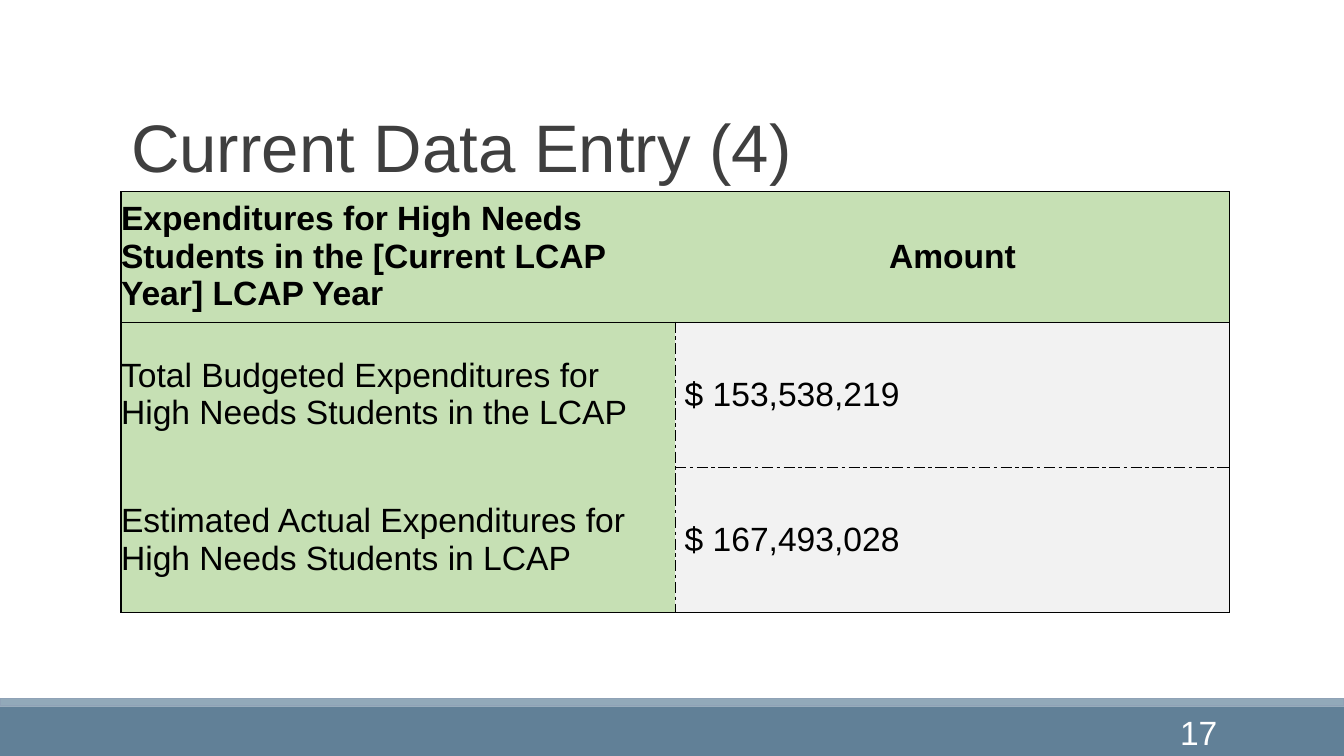
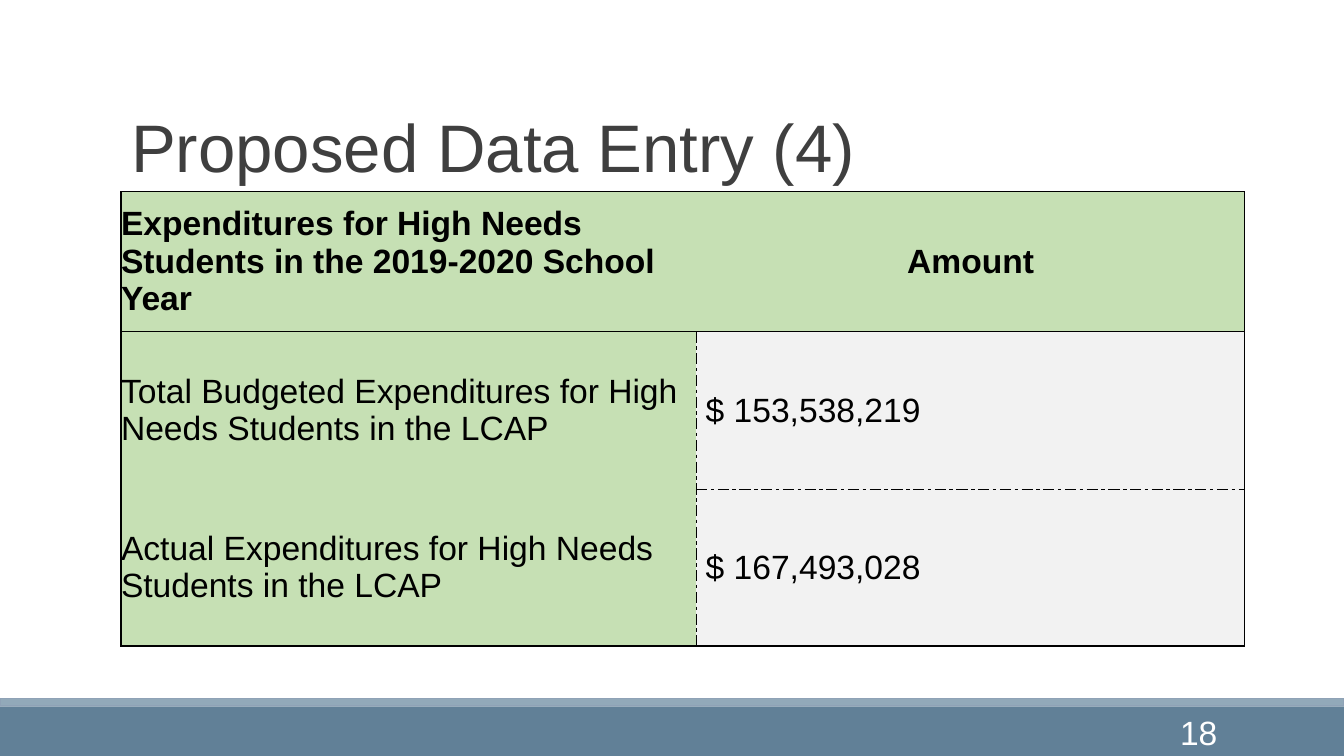
from lxml.etree import SubElement
from pptx import Presentation
from pptx.dml.color import RGBColor
from pptx.enum.shapes import MSO_SHAPE
from pptx.enum.text import MSO_ANCHOR, MSO_AUTO_SIZE, PP_ALIGN
from pptx.oxml.ns import qn
from pptx.util import Cm, Pt

FONT = "Arial"
BLACK, WHITE, TITLE_GREY = "000000", "FFFFFF", "3F3F3F"
GREEN, PALE_GREY = "C6E0B4", "F2F2F2"
BANDS = [
    (17.8, 1.25, "618097", None),
    (17.6, 0.18, "92A9B9", "8FA2B6"),
]
LEFT, TABLE_TOP = 3.05, 4.83
FIRST_NUMBER = 17

PAGES = [
    {
        "title": "Current Data Entry (4)",
        "columns": [13.97, 13.97],
        "heights": [3.28, 3.66, 3.66],
        "rows": [
            ("Expenditures for High Needs Students in the [Current LCAP Year] LCAP Year", "Amount"),
            ("Total Budgeted Expenditures for High Needs Students in the LCAP", " $ 153,538,219"),
            ("Estimated Actual Expenditures for High Needs Students in LCAP", " $ 167,493,028"),
        ],
    },
    {
        "title": "Proposed Data Entry (4)",
        "columns": [14.5, 13.82],
        "heights": [3.53, 3.96, 3.96],
        "rows": [
            ("Expenditures for High Needs Students in the 2019-2020 School Year", "Amount"),
            ("Total Budgeted Expenditures for High Needs Students in the LCAP", " $ 153,538,219"),
            ("Actual Expenditures for High Needs Students in the LCAP", " $ 167,493,028"),
        ],
    },
]

OUTER, HEADER, INNER = (1, "solid"), (0.5, "solid"), (0.5, "dashDot")


def rgb(value):
    return RGBColor.from_string(value)


def write(frame, text, size, color, align=PP_ALIGN.LEFT, bold=False):
    para = frame.paragraphs[0]
    para.alignment = align
    span = para.add_run()
    span.text = text
    span.font.name = FONT
    span.font.size = Pt(size)
    span.font.bold = bold
    span.font.color.rgb = rgb(color)
    return para


def move_bands_to_layout(page, width):
    for index, (top, height, fill, line) in enumerate(BANDS):
        band = page.shapes.add_shape(MSO_SHAPE.RECTANGLE, 0, Cm(top), width, Cm(height))
        band.shadow.inherit = False
        band.fill.solid()
        band.fill.fore_color.rgb = rgb(fill)
        if line:
            band.line.color.rgb = rgb(line)
            band.line.width = Pt(1.25)
        else:
            band.line.fill.background()
        page.slide_layout.shapes.element.insert(2 + index, band.element)


def add_title(page, text):
    title = page.shapes.title
    title.left, title.top, title.width, title.height = Cm(LEFT), Cm(0.79), Cm(27.94), Cm(4.04)
    frame = title.text_frame
    frame.auto_size = MSO_AUTO_SIZE.NONE
    frame.vertical_anchor = MSO_ANCHOR.BOTTOM
    write(frame, text, 48, TITLE_GREY).line_spacing = 0.85


def add_number(page, number):
    box = page.shapes.add_textbox(Cm(27.3), Cm(17.93), Cm(3.63), Cm(1.02))
    box.text_frame.word_wrap = True
    box.text_frame.vertical_anchor = MSO_ANCHOR.MIDDLE
    write(box.text_frame, str(number), 24, WHITE, PP_ALIGN.RIGHT)


def vertical_edge(row, position):
    if position != 1:
        return OUTER
    return INNER if row else None


def horizontal_edge(column, position):
    if position in (0, 3):
        return OUTER
    if position == 1:
        return HEADER
    return INNER if column else None


def set_borders(cell, row, column):
    edges = [
        ("a:lnL", vertical_edge(row, column)),
        ("a:lnR", vertical_edge(row, column + 1)),
        ("a:lnT", horizontal_edge(column, row)),
        ("a:lnB", horizontal_edge(column, row + 1)),
    ]
    properties = cell._tc.get_or_add_tcPr()
    for index, (tag, style) in enumerate(edges):
        line = SubElement(properties, qn(tag))
        properties.insert(index, line)
        if style is None:
            SubElement(line, qn("a:noFill"))
            continue
        width, dash = style
        line.set("w", str(int(Pt(width))))
        fill = SubElement(line, qn("a:solidFill"))
        SubElement(fill, qn("a:srgbClr")).set("val", BLACK)
        SubElement(line, qn("a:prstDash")).set("val", dash)


def add_expenditures(page, columns, heights, rows):
    table = page.shapes.add_table(
        len(rows), len(columns), Cm(LEFT), Cm(TABLE_TOP), Cm(sum(columns)), Cm(sum(heights))
    ).table
    table.first_row = table.horz_banding = False
    for column, width in zip(table.columns, columns):
        column.width = Cm(width)
    for row, height in zip(table.rows, heights):
        row.height = Cm(height)
    for row, texts in enumerate(rows):
        for column, text in enumerate(texts):
            cell = table.cell(row, column)
            cell.margin_left = cell.margin_right = cell.margin_top = cell.margin_bottom = 0
            cell.vertical_anchor = MSO_ANCHOR.MIDDLE
            is_header = row == 0
            cell.fill.solid()
            cell.fill.fore_color.rgb = rgb(GREEN if is_header or column == 0 else PALE_GREY)
            align = PP_ALIGN.CENTER if is_header and column else PP_ALIGN.LEFT
            write(cell.text_frame, text, 24, BLACK, align, is_header)
            set_borders(cell, row, column)


def main():
    deck = Presentation()
    deck.slide_width, deck.slide_height = Cm(33.87), Cm(19.05)
    layout = deck.slide_layouts[5]
    for index, content in enumerate(PAGES):
        page = deck.slides.add_slide(layout)
        if index == 0:
            move_bands_to_layout(page, deck.slide_width)
        add_title(page, content["title"])
        add_expenditures(page, content["columns"], content["heights"], content["rows"])
        add_number(page, FIRST_NUMBER + index)
    deck.save("out.pptx")


if __name__ == "__main__":
    main()
